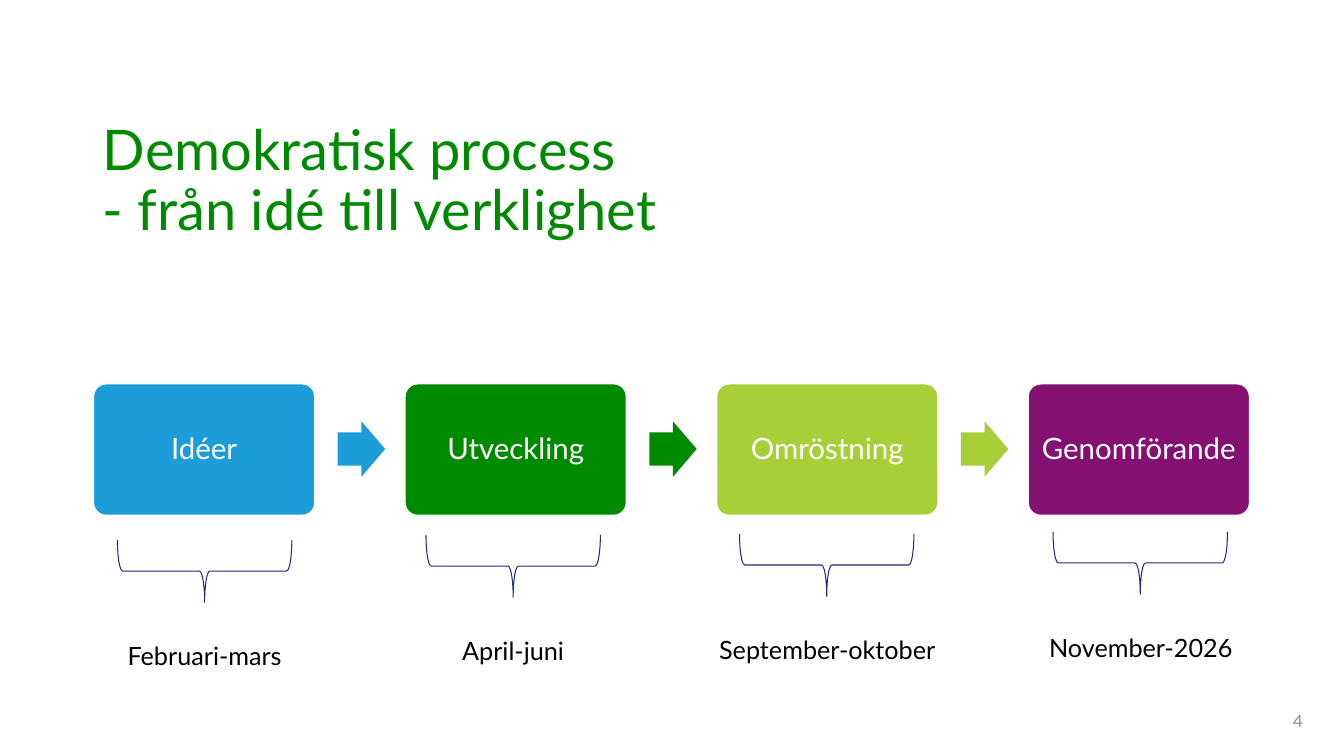
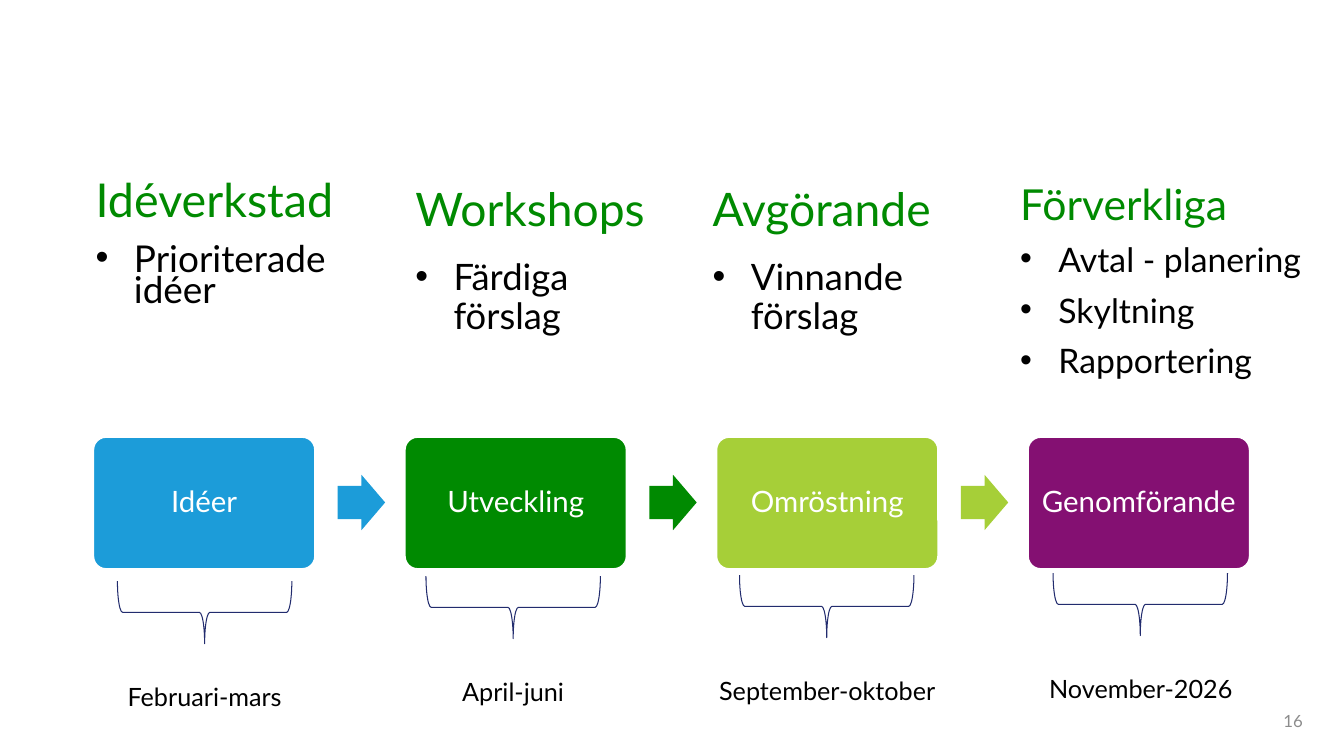
from lxml import etree
from pptx import Presentation
from pptx import util as u
from pptx.dml import color
from pptx.enum import shapes, text
from pptx.oxml import ns

PX = 9144
FONT = "Lato"
GREEN, WHITE, BLACK, GREY, NAVY = "008A01", "FFFFFF", "000000", "8C8C8C", "222C6E"
LEFT, PITCH = 92, 309
BOX_W, BOX_H = 221, 132
ARROW_W, ARROW_H = 47, 55
BRACE_W, BRACE_H = 62, 173
STEPS = [
    ("Idéer", "1C9CD9", "Februari-mars", 203, 8, 176),
    ("Utveckling", GREEN, "April-juni", 509, 3, 176),
    ("Omröstning", "A6CF38", "September-oktober", 820, 2, 235),
    ("Genomförande", "841072", "November-2026", 1131, 0, 235),
]
RESULTS = [
    ((85, 180, 275, 181), 0.7, 33.3, 26.4, "Idéverkstad", ["Prioriterade idéer"]),
    ((402, 180, 275, 181), 0.9, 33, 26, "Workshops", ["Färdiga förslag"]),
    ((697, 180, 275, 181), 0.9, 33, 26, "Avgörande", ["Vinnande förslag"]),
    ((1002, 185, 330, 206), 0.7, 30.5, 24.1, "Förverkliga",
     ["Avtal - planering", "Skyltning", "Rapportering"]),
]


def px(*values):
    return [u.Emu(v * PX) for v in values]


def rgb(value):
    return color.RGBColor.from_string(value)


def add_run(p, words, size, colour):
    r = p.add_run()
    r.text = words
    r.font.name = FONT
    r.font.size = u.Pt(size)
    r.font.color.rgb = rgb(colour)


def add_shape(s, kind, box, fill=None, line=None, width=1, adjustments=()):
    sp = s.shapes.add_shape(kind, *px(*box))
    sp.shadow.inherit = False
    for i, value in enumerate(adjustments):
        sp.adjustments[i] = value
    if fill:
        sp.fill.solid()
        sp.fill.fore_color.rgb = rgb(fill)
    else:
        sp.fill.background()
    if line:
        sp.line.color.rgb = rgb(line)
        sp.line.width = u.Pt(width)
    else:
        sp.line.fill.background()
    return sp


def add_text_frame(s, box):
    tf = s.shapes.add_textbox(*px(*box)).text_frame
    tf.word_wrap = True
    return tf


def add_label(s, box, words, size, colour, align, anchor=text.MSO_ANCHOR.TOP):
    tf = add_text_frame(s, box)
    tf.vertical_anchor = anchor
    p = tf.paragraphs[0]
    p.alignment = align
    add_run(p, words, size, colour)


def add_bullet(p):
    indent = 38 * PX
    pPr = p._p.get_or_add_pPr()
    pPr.set("marL", str(indent))
    pPr.set("indent", str(-indent))
    etree.SubElement(pPr, ns.qn("a:buFont")).set("typeface", "Arial")
    etree.SubElement(pPr, ns.qn("a:buChar")).set("char", "•")


def add_title(s, lines):
    sp = s.shapes.title
    sp.left, sp.top, sp.width, sp.height = px(92, 109, 1025, 137)
    tf = sp.text_frame
    tf.auto_size = text.MSO_AUTO_SIZE.NONE
    tf.vertical_anchor = text.MSO_ANCHOR.BOTTOM
    p = tf.paragraphs[0]
    p.alignment = text.PP_ALIGN.LEFT
    p.line_spacing = 0.9
    for i, line in enumerate(lines):
        if i:
            p.add_line_break()
        add_run(p, line, 40, GREEN)


def add_step(s, x, y, name, colour):
    sp = add_shape(s, shapes.MSO_SHAPE.ROUNDED_RECTANGLE, (x, y, BOX_W, BOX_H),
                   colour, WHITE, 2, [0.1])
    tf = sp.text_frame
    tf.margin_left = tf.margin_right = u.Emu(4 * PX)
    tf.vertical_anchor = text.MSO_ANCHOR.MIDDLE
    p = tf.paragraphs[0]
    p.alignment = text.PP_ALIGN.CENTER
    p.line_spacing = 0.9
    add_run(p, name, 21, WHITE)


def add_period(s, centre, y, words, width):
    brace = add_shape(s, shapes.MSO_SHAPE.LEFT_BRACE,
                      (centre - BRACE_W // 2, y, BRACE_W, BRACE_H), line=NAVY, width=0.75)
    brace.rotation = 270
    add_label(s, (centre - width // 2, y + 150, width, 40), words, 18, BLACK,
              text.PP_ALIGN.CENTER)


def add_process(s, top, brace_top):
    for i, (name, colour, period, centre, drop, width) in enumerate(STEPS):
        x = LEFT + i * PITCH
        add_step(s, x, top, name, colour)
        if i < len(STEPS) - 1:
            add_shape(s, shapes.MSO_SHAPE.RIGHT_ARROW,
                      (x + 243, top + (BOX_H - ARROW_H) // 2, ARROW_W, ARROW_H),
                      colour, adjustments=[0.6, 0.5])
        add_period(s, centre, brace_top + drop, period, width)


def add_result(s, box, spacing, head_size, item_size, heading, items):
    tf = add_text_frame(s, box)
    p = tf.paragraphs[0]
    p.line_spacing = spacing
    p.space_after = u.Pt(6)
    add_run(p, heading, head_size, GREEN)
    for item in items:
        p = tf.add_paragraph()
        p.line_spacing = spacing
        p.space_before = u.Pt(10)
        p.space_after = u.Pt(6)
        add_bullet(p)
        add_run(p, item, item_size, BLACK)


def add_number(s, number):
    add_label(s, (1002, 695, 300, 40), number, 12, GREY,
              text.PP_ALIGN.RIGHT, text.MSO_ANCHOR.MIDDLE)


def main():
    prs = Presentation()
    prs.slide_width, prs.slide_height = px(1333, 750)

    s = prs.slides.add_slide(prs.slide_layouts[5])
    add_title(s, ["Demokratisk process", "- från idé till verklighet"])
    add_process(s, 380, 472)
    add_number(s, "4")

    s = prs.slides.add_slide(prs.slide_layouts[6])
    for result in RESULTS:
        add_result(s, *result)
    add_process(s, 433, 513)
    add_number(s, "16")

    prs.save("out.pptx")


if __name__ == "__main__":
    main()
